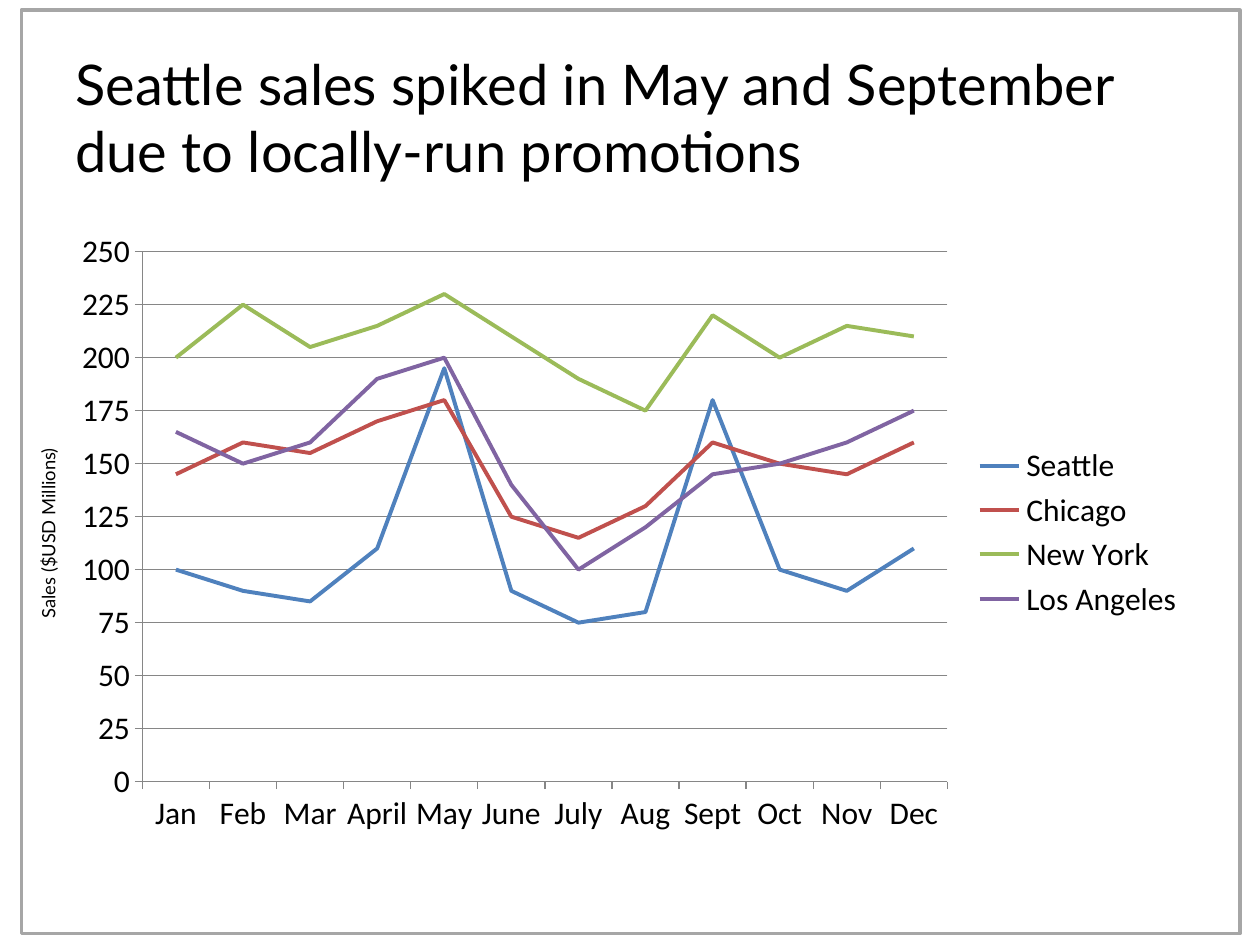
from lxml.etree import SubElement
from pptx import Presentation
from pptx.chart.data import CategoryChartData
from pptx.dml.color import RGBColor
from pptx.enum.chart import XL_CHART_TYPE, XL_LEGEND_POSITION, XL_MARKER_STYLE, XL_TICK_MARK
from pptx.enum.shapes import MSO_SHAPE
from pptx.enum.text import MSO_ANCHOR
from pptx.oxml.ns import qn
from pptx.util import Inches, Pt

COLUMNS, ROWS = 10, 7.5  # square grid modules, one inch each
COLORS = {
    "text": "000000",
    "frame": "A6A6A6",
    "axis": "868686",
    "Seattle": "4F81BD",
    "Chicago": "C0504D",
    "New York": "9BBB59",
    "Los Angeles": "8064A2",
}
MONTHS = ["Jan", "Feb", "Mar", "April", "May", "June",
          "July", "Aug", "Sept", "Oct", "Nov", "Dec"]
SALES = {
    "Seattle": [100, 90, 85, 110, 195, 90, 75, 80, 180, 100, 90, 110],
    "Chicago": [145, 160, 155, 170, 180, 125, 115, 130, 160, 150, 145, 160],
    "New York": [200, 225, 205, 215, 230, 210, 190, 175, 220, 200, 215, 210],
    "Los Angeles": [165, 150, 160, 190, 200, 140, 100, 120, 145, 150, 160, 175],
}


def rgb(name):
    return RGBColor.from_string(COLORS[name])


def write(frame, text, size, font="Lato", color="text", anchor=MSO_ANCHOR.TOP):
    frame.word_wrap = True
    frame.vertical_anchor = anchor
    run = frame.paragraphs[0].add_run()
    run.text = text
    run.font.name, run.font.size = font, Pt(size)
    run.font.color.rgb = rgb(color)


def place_plot(chart, **shares):
    """Fix the inner plot area, given as shares of the chart's size."""
    plot_area = chart.element.find(".//" + qn("c:plotArea"))
    layout = plot_area.find(qn("c:layout"))
    if layout is None:
        layout = SubElement(plot_area, qn("c:layout"))
        plot_area.insert(0, layout)
    manual = SubElement(layout, qn("c:manualLayout"))
    settings = {"layoutTarget": "inner", "xMode": "edge", "yMode": "edge", **shares}
    for tag, value in settings.items():
        SubElement(manual, qn("c:" + tag)).set("val", str(value))


class SalesSlide:
    """Holds the chart style and the slide; places are in grid columns and rows."""

    chart_font, chart_size = "Calibri", 18
    series_width, axis_width = 2.25, 0.75

    def __init__(self, deck):
        self.slide = deck.slides.add_slide(deck.slide_layouts[6])

    def frame(self, *place):
        border = self.slide.shapes.add_shape(MSO_SHAPE.RECTANGLE, *map(Inches, place))
        border.shadow.inherit = False
        border.fill.background()
        border.line.color.rgb = rgb("frame")
        border.line.width = Pt(2)

    def text(self, *place, words, rotation=0, **style):
        box = self.slide.shapes.add_textbox(*map(Inches, place))
        box.rotation = rotation
        write(box.text_frame, words, **style)

    def axis_line(self, line):
        line.color.rgb = rgb("axis")
        line.width = Pt(self.axis_width)

    def line_chart(self, *place, categories, series, top, step):
        data = CategoryChartData()
        data.categories = categories
        for name, values in series.items():
            data.add_series(name, values)
        chart = self.slide.shapes.add_chart(
            XL_CHART_TYPE.LINE, *map(Inches, place), data).chart
        chart.has_title = False
        chart.font.name, chart.font.size = self.chart_font, Pt(self.chart_size)
        chart.font.color.rgb = rgb("text")

        chart.has_legend = True
        chart.legend.position = XL_LEGEND_POSITION.RIGHT
        chart.legend.include_in_layout = False

        for axis in (chart.category_axis, chart.value_axis):
            axis.major_tick_mark = XL_TICK_MARK.OUTSIDE
            axis.minor_tick_mark = XL_TICK_MARK.NONE
            self.axis_line(axis.format.line)
        scale = chart.value_axis
        scale.minimum_scale, scale.maximum_scale, scale.major_unit = 0, top, step
        scale.has_major_gridlines = True
        self.axis_line(scale.major_gridlines.format.line)

        plot = chart.plots[0]
        plot.vary_by_categories = False
        for city in plot.series:
            city.smooth = False
            city.marker.style = XL_MARKER_STYLE.NONE
            city.format.line.color.rgb = rgb(city.name)
            city.format.line.width = Pt(self.series_width)
        place_plot(chart, x=0.07, y=0.05, w=0.71, h=0.85)


def main():
    deck = Presentation()
    deck.slide_width, deck.slide_height = Inches(COLUMNS), Inches(ROWS)
    sales = SalesSlide(deck)
    sales.frame(0.17, 0.08, 9.67, 7.33)
    sales.text(0.5, 0.3, 9, 1.25, size=32, anchor=MSO_ANCHOR.MIDDLE,
               words="Seattle sales spiked in May and September "
                     "due to locally-run promotions")
    sales.line_chart(0.5, 1.75, 9, 4.95, categories=MONTHS, series=SALES,
                     top=250, step=25)
    sales.text(-0.57, 3.9, 1.92, 0.29, words="Sales ($USD Millions)",
               rotation=270, size=10.5)
    deck.save("out.pptx")


if __name__ == "__main__":
    main()
